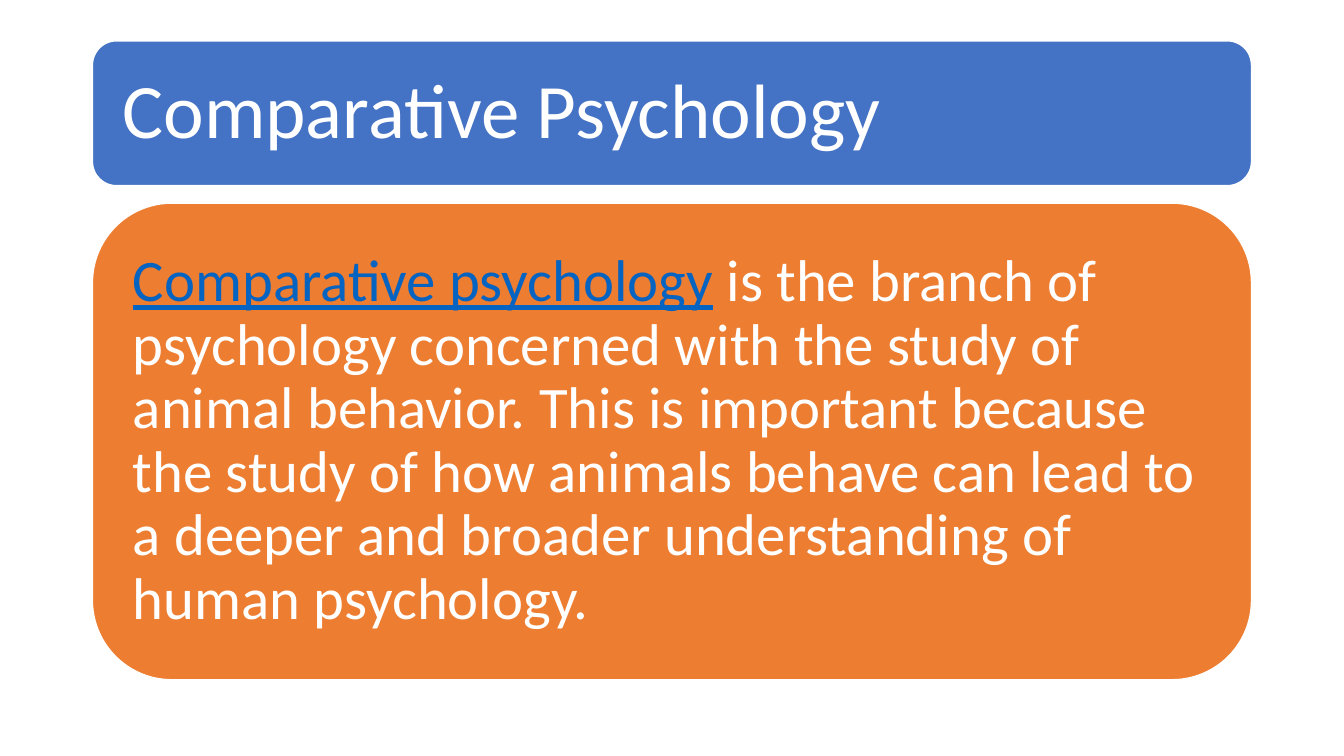
from pptx import Presentation
from pptx import util as u
from pptx.dml.color import RGBColor
from pptx.enum import shapes, text

WHITE = RGBColor(0xFF, 0xFF, 0xFF)
BLUE = RGBColor(0x44, 0x72, 0xC4)
ORANGE = RGBColor(0xED, 0x7D, 0x31)
LINK_BLUE = RGBColor(0x05, 0x63, 0xC1)


def set_all(target, values):
    for name, value in values.items():
        setattr(target, name, value)


def box(left, top, width, height):
    lengths = (left, top, width, height)
    return dict(zip(("left", "top", "width", "height"), map(u.Cm, lengths)))


class PsychologySlide:
    font_name = "Calibri"

    def __init__(self, deck):
        self.slide = deck.slides.add_slide(deck.slide_layouts[5])

    def panel(self, place, color):
        panel = self.slide.shapes.add_shape(
            shapes.MSO_SHAPE.ROUNDED_RECTANGLE, **place)
        panel.shadow.inherit = False
        panel.fill.solid()
        panel.fill.fore_color.rgb = color
        panel.line.color.rgb = WHITE
        panel.line.width = u.Pt(1)
        return panel

    def fill_text(self, holder, runs, size, inset):
        frame = holder.text_frame
        margins = ("margin_left", "margin_top", "margin_right", "margin_bottom")
        set_all(frame, dict.fromkeys(margins, u.Cm(inset)))
        set_all(frame, {"word_wrap": True,
                        "auto_size": text.MSO_AUTO_SIZE.NONE,
                        "vertical_anchor": text.MSO_ANCHOR.MIDDLE})
        paragraph = frame.paragraphs[0]
        set_all(paragraph, {"alignment": text.PP_ALIGN.LEFT, "line_spacing": 0.9})
        for wording, color, underline in runs:
            run = paragraph.add_run()
            run.text = wording
            set_all(run.font, {"name": self.font_name, "size": u.Pt(size),
                               "underline": underline})
            run.font.color.rgb = color

    def heading(self, place, wording, size, inset):
        heading = self.slide.shapes.title
        set_all(heading, place)
        self.fill_text(heading, [(wording, WHITE, False)], size, inset)
        return heading

    def body(self, place, runs, size, inset):
        self.fill_text(self.slide.shapes.add_textbox(**place), runs, size, inset)


def main():
    deck = Presentation()
    set_all(deck, {"slide_width": u.Cm(33.87), "slide_height": u.Cm(19.05)})
    page = PsychologySlide(deck)

    heading_panel = page.panel(box(2.33, 1.03, 29.21, 3.65), BLUE)
    heading = page.heading(box(2.51, 1.21, 28.85, 3.29),
                           "Comparative Psychology", 55, 0.58)
    heading.element.addprevious(heading_panel.element)

    page.panel(box(2.33, 5.12, 29.21, 12.01), ORANGE)
    page.body(box(2.92, 5.71, 28.03, 10.83), [
        ("Comparative psychology", LINK_BLUE, True),
        (" is the branch of psychology concerned with the study of animal "
         "behavior. This is important because the study of how animals behave "
         "can lead to a deeper and broader understanding of human psychology.",
         WHITE, False),
    ], 42, 0.43)

    deck.save("out.pptx")


if __name__ == "__main__":
    main()
